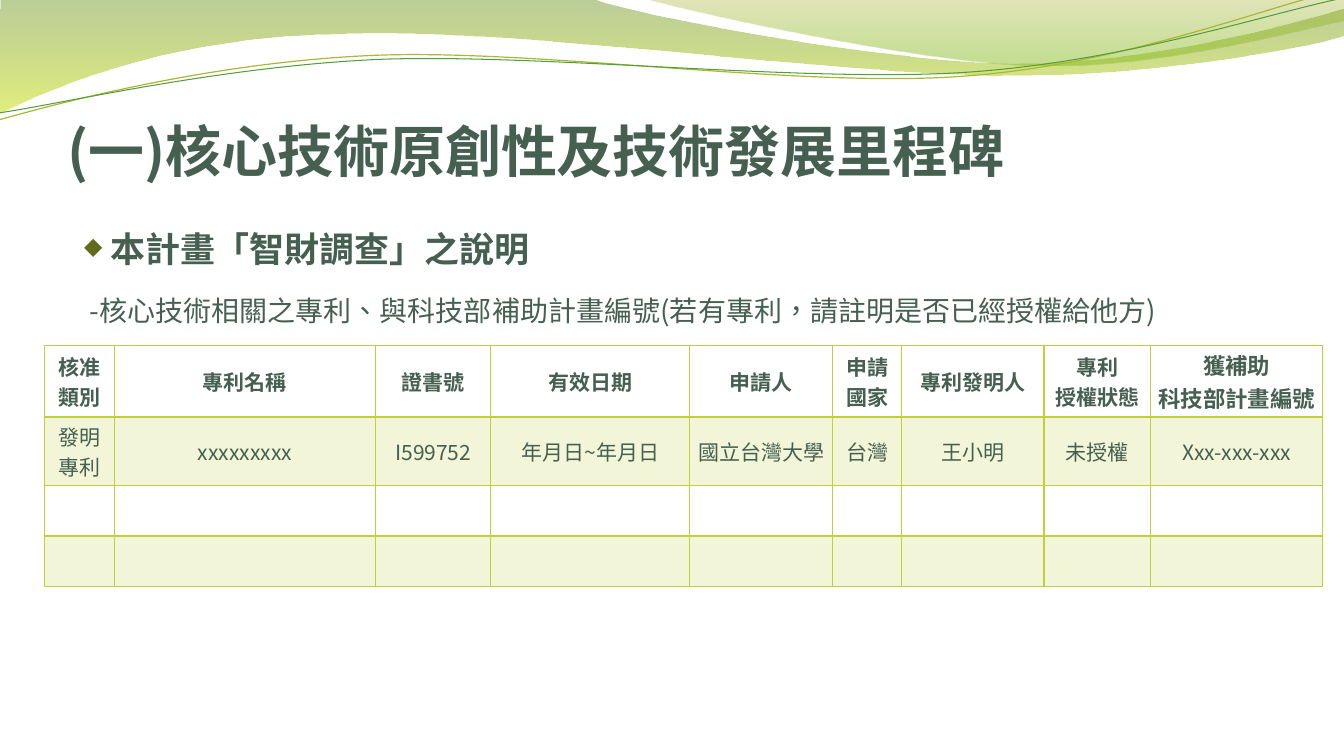
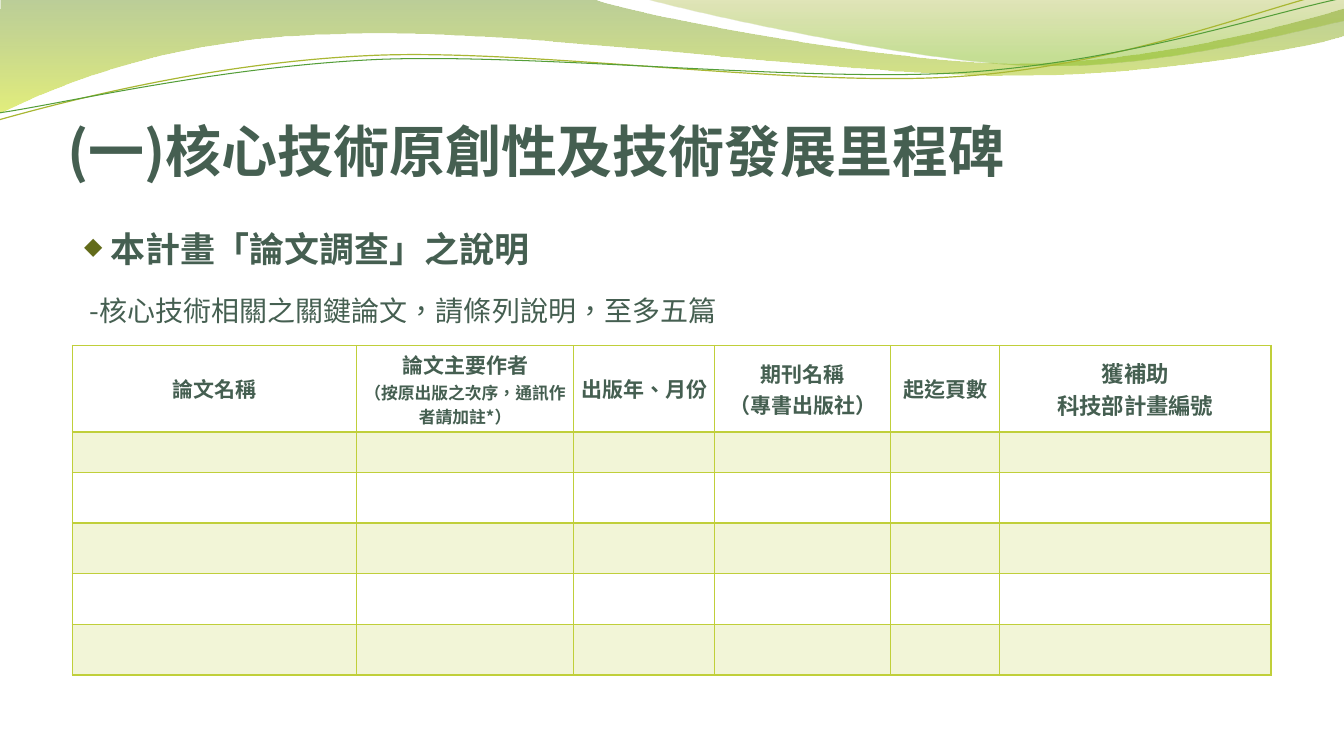
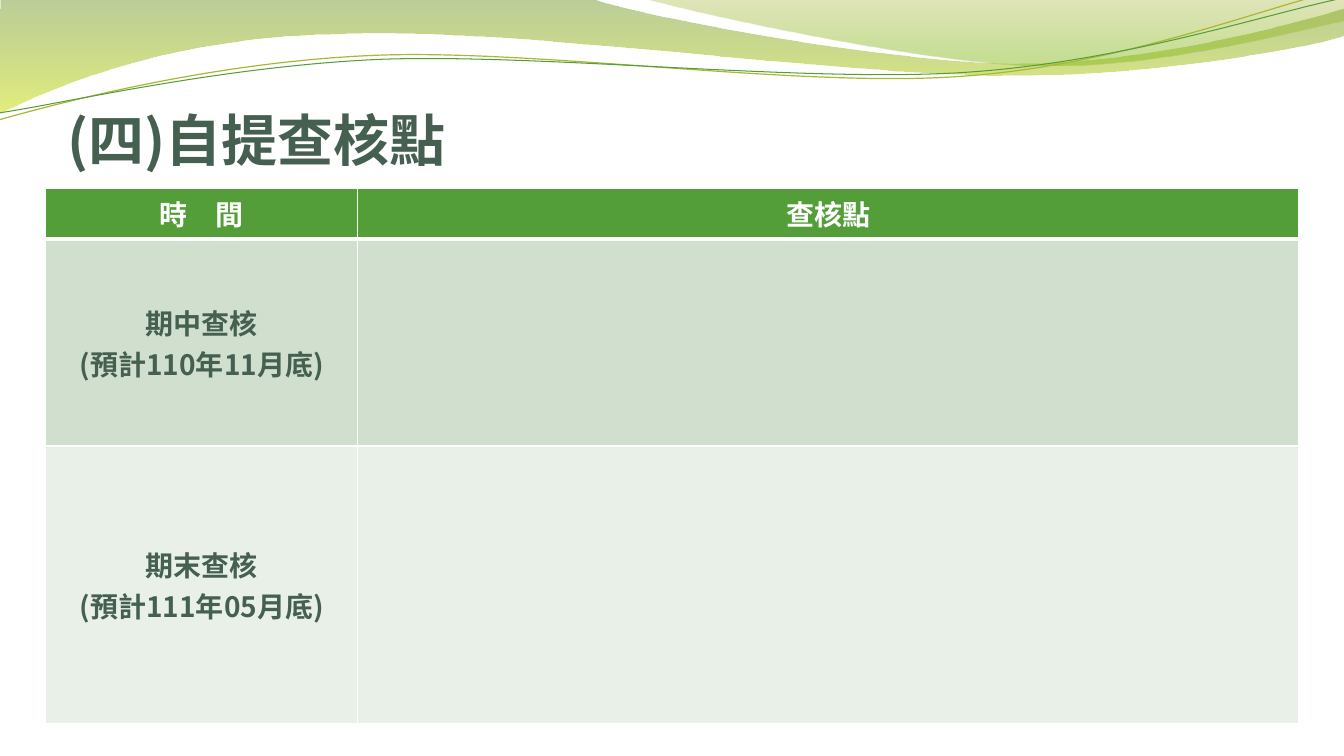
from dataclasses import dataclass

from lxml.etree import SubElement
from pptx import Presentation
from pptx.dml.color import RGBColor
from pptx.enum.text import MSO_ANCHOR as Anchor, PP_ALIGN as Align
from pptx.oxml.ns import qn
from pptx.util import Pt


@dataclass(frozen=True)
class Theme:
    ink: str = "455F51"
    white: str = "FFFFFF"
    green: str = "549E39"
    olive: str = "A9B733"
    lime: str = "C0CF3A"
    sage: str = "D1DFCE"
    mist: str = "E9F0E8"
    mark: str = "626B1A"
    sans: str = "Noto Sans CJK SC"
    head: str = "Noto Sans CJK TC"
    title: int = 40
    lead: int = 25
    body: int = 20
    cell: int = 15
    grant: int = 16
    note: int = 12


T = Theme()

# Outlines in points: a pair is a straight step, six numbers a Bezier step.
BANDS = [
    ([(0, 0), (422.6, -0.7),
      (456.5, 12, 636.5, 45.4, 728, 45.4), (818.6, 45.4, 919.4, 18.7, 960, 6.5),
      (960.5, 26),
      (944, 31.7, 834.5, 54.7, 715.7, 54.2), (596.9, 54, 366.5, 20.2, 247, 24.5),
      (123.8, 26, 44, 59.8, -1.4, 81.4), (0, 0)],
     [(0, "69921C", 45), (1, "CCE10F", 55)]),
    ([(459.4, -0.7), (489, 8, 654.5, 44.6, 738, 46.8),
      (820.8, 49.7, 923, 23, 960, 15), (960, 0), (459.4, -0.7)],
     [(0, "9BAA1A", 30), (0.8, "81BA16", 45)]),
]
TILT = 357.3
WAVES = [
    ([(-2.3, 63), (44.4, 52.3, 151.4, 29.2, 266, 29.6),
      (379.9, 29.9, 567, 66.8, 682.4, 64.4),
      (798.6, 62.6, 901.9, 25.7, 959.4, 15.4)], T.olive, 0.85),
    ([(-2, 58), (43.6, 53.6, 157.1, 32.3, 271.7, 32.6),
      (386.9, 33.8, 572.3, 63.4, 687, 61.6),
      (801.6, 59.8, 904.7, 30.1, 961.3, 21.2)], T.green, 0.75),
]

# A cell is a list of lines; a line is text, or text with its own size.
GRANT = [("獲補助", T.grant), ("科技部計畫編號", T.grant)]
LIME = dict(line=T.lime, rule=2, size=T.cell, head=T.ink, top=246.8, pad=2,
            fills=[None, (T.lime, 20), None])
SLIDES = [
    dict(title="(一)核心技術原創性及技術發展里程碑", face=T.head, top=41,
         lead="本計畫「智財調查」之說明",
         note="-核心技術相關之專利、與科技部補助計畫編號(若有專利，請註明是否已經授權給他方)",
         table=dict(
             LIME, left=31.6,
             cols=[50, 186.8, 82.3, 142, 102, 49.5, 101.6, 76.2, 122.8],
             rows=[51, 49, 36, 36],
             cells=[
                 [["核准類別"], ["專利名稱"], ["證書號"], ["有效日期"], ["申請人"],
                  ["申請國家"], ["專利發明人"], ["專利", "授權狀態"], GRANT],
                 [["發明專利"], ["xxxxxxxxx"], ["I599752"], ["年月日~年月日"],
                  ["國立台灣大學"], ["台灣"], ["王小明"], ["未授權"],
                  ["Xxx-xxx-xxx"]],
             ])),
    dict(title="(一)核心技術原創性及技術發展里程碑", face=T.head, top=41,
         lead="本計畫「論文調查」之說明",
         note="-核心技術相關之關鍵論文，請條列說明，至多五篇",
         table=dict(
             LIME, left=51.6, cols=[203, 155.2, 100.6, 126, 77.6, 194],
             rows=[61.8, 28.8, 36.2, 36.2, 36.2, 36.2],
             cells=[
                 [["論文名稱"],
                  ["論文主要作者", ("（按原出版之次序，通訊作者請加註*）", T.note)],
                  ["出版年、月份"], ["期刊名稱", "（專書出版社）"], ["起迄頁數"],
                  GRANT],
             ])),
    dict(title="(四)自提查核點", face=T.sans, top=33.5,
         table=dict(
             line=T.white, rule=3, size=T.body, head=T.white, bold=True,
             left=32.6, top=134.6, pad=0, cols=[223, 672], rows=[36, 148, 198],
             fills=[(T.green, 100), (T.sage, 100), (T.mist, 100)],
             cells=[
                 [["時　間"], ["查核點"]],
                 [["期中查核", "(預計110年11月底)"]],
                 [["期末查核", "(預計111年05月底)"]],
             ])),
]


def rgb(code):
    return RGBColor.from_string(code)


def style(para, size, color=T.ink, bold=False, face=T.sans):
    font = para.font
    font.name, font.size, font.bold = face, Pt(size), bold
    font.color.rgb = rgb(color)
    font._element.set("lang", "zh-TW")
    SubElement(font._element, qn("a:ea"), typeface=face)


def fade(root, alphas):
    """Give each colour below root its opacity in percent."""
    for ink, alpha in zip(root.iter(qn("a:srgbClr")), alphas):
        SubElement(ink, qn("a:alpha"), val=str(alpha * 1000))


def outline(slide, steps, close):
    """Lay all points as straight steps, then join each triple to a curve."""
    (x, y), *rest = steps
    pen = slide.shapes.build_freeform(Pt(x), Pt(y))
    pen.add_line_segments(
        [(Pt(s[i]), Pt(s[i + 1])) for s in rest for i in range(0, len(s), 2)],
        close=close)
    shape = pen.convert_to_shape()
    shape.shadow.inherit = False
    lines = iter(list(shape._element.iter(qn("a:lnTo"))))
    for step in rest:
        first = next(lines)
        if len(step) == 6:
            first.tag = qn("a:cubicBezTo")
            for _ in range(2):
                more = next(lines)
                first.append(more[0])
                more.getparent().remove(more)
    return shape


def backdrop(slide):
    """Draw the bands and waves, and hand them to the slide's layout."""
    shapes = []
    for steps, stops in BANDS:
        band = outline(slide, steps, True)
        band.line.fill.background()
        band.fill.gradient()
        band.fill.gradient_angle = 270
        for stop, (pos, color, _) in zip(band.fill.gradient_stops, stops):
            stop.position = pos
            stop.color.rgb = rgb(color)
        fade(band._element.spPr, [alpha for _, _, alpha in stops])
        shapes.append(band)
    for steps, color, width in WAVES:
        wave = outline(slide, steps, False)
        wave.rotation = TILT
        wave.fill.background()
        wave.line.color.rgb = rgb(color)
        wave.line.width = Pt(width)
        shapes.append(wave)
    tree = slide.slide_layout.shapes._spTree
    for holder in list(slide.slide_layout.placeholders):
        tree.remove(holder._element)
    for shape in shapes:
        tree.append(shape._element)


def textbox(slide, *box):
    frame = slide.shapes.add_textbox(*map(Pt, box)).text_frame
    frame.word_wrap = True
    return frame


def heading(slide, text, face, top):
    frame = textbox(slide, 48, top, 864, 90)
    frame.vertical_anchor = Anchor.BOTTOM
    frame.margin_left = frame.margin_right = frame.margin_bottom = 0
    para = frame.paragraphs[0]
    para.text = text
    style(para, T.title, bold=True, face=face)


def intro(slide, lead, note):
    frame = textbox(slide, 48, 144, 880.6, 103)
    top, sub = frame.paragraphs[0], frame.add_paragraph()
    for para, text in (top, lead), (sub, note):
        para.text = text
        para.line_spacing = 1.5
        para.space_before = Pt(5)
    props = top._p.get_or_add_pPr()
    props.set("marL", str(Pt(23.6)))
    props.set("indent", str(-Pt(18.6)))
    color = SubElement(props, qn("a:buClr"))
    SubElement(color, qn("a:srgbClr"), val=T.mark)
    SubElement(props, qn("a:buSzPct"), val="68000")
    SubElement(props, qn("a:buChar"), char="◆")
    sub._p.get_or_add_pPr().set("marL", str(Pt(9)))
    style(top, T.lead, bold=True)
    style(sub, T.body)


def borders(cell, color, widths):
    props = cell._tc.get_or_add_tcPr()
    for side, width in zip("LRTB", widths):
        line = SubElement(props, qn("a:ln" + side), w=str(Pt(width)))
        fill = SubElement(line, qn("a:solidFill"))
        SubElement(fill, qn("a:srgbClr"), val=color)


def shade(cell, paint):
    if not paint:
        cell.fill.background()
        return
    color, alpha = paint
    cell.fill.solid()
    cell.fill.fore_color.rgb = rgb(color)
    if alpha < 100:
        fade(cell._tc.tcPr.find(qn("a:solidFill")), [alpha])


def write(cell, lines, size, color, bold):
    cell.vertical_anchor = Anchor.MIDDLE
    frame = cell.text_frame
    for i, line in enumerate(lines or [("", T.note)]):
        text, own = line if isinstance(line, tuple) else (line, size)
        para = frame.add_paragraph() if i else frame.paragraphs[0]
        para.text = text
        para.alignment = Align.CENTER
        style(para, own, color, bold)


def grid(slide, left, top, cols, rows, cells, fills, line, rule, size, head,
         pad, bold=False):
    """Draw a table; fills holds the header, odd and even row colours."""
    box = left, top, sum(cols), sum(rows)
    table = slide.shapes.add_table(len(rows), len(cols), *map(Pt, box)).table
    table.horz_banding = False
    for col, width in zip(table.columns, cols):
        col.width = Pt(width)
    for r, height in enumerate(rows):
        table.rows[r].height = Pt(height)
        paint = fills[0] if r == 0 else fills[2 - r % 2]
        texts = cells[r] if r < len(cells) else []
        for c in range(len(cols)):
            cell = table.cell(r, c)
            cell.margin_left = cell.margin_right = Pt(5)
            cell.margin_top = cell.margin_bottom = Pt(pad)
            write(cell, texts[c] if c < len(texts) else [], size,
                  T.ink if r else head, bold or r == 0)
            borders(cell, line, (1, 1, rule if r == 1 else 1, 1 if r else rule))
            shade(cell, paint)


def main():
    deck = Presentation()
    deck.slide_width, deck.slide_height = Pt(960), Pt(540)
    blank = deck.slide_layouts[6]
    for i, data in enumerate(SLIDES):
        slide = deck.slides.add_slide(blank)
        if i == 0:
            backdrop(slide)
        heading(slide, data["title"], data["face"], data["top"])
        if "lead" in data:
            intro(slide, data["lead"], data["note"])
        grid(slide, **data["table"])
    deck.save("out.pptx")


if __name__ == "__main__":
    main()
